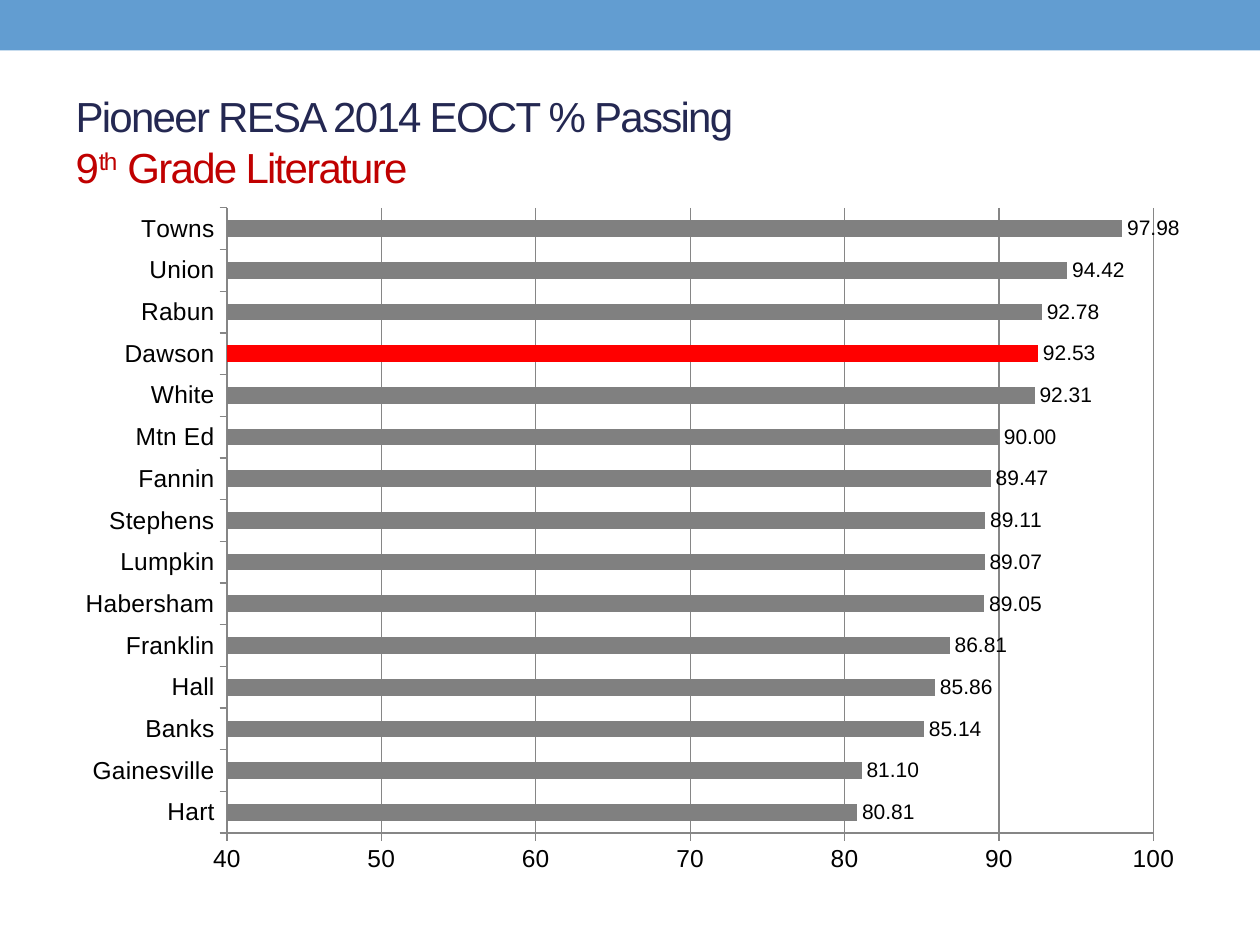
from dataclasses import dataclass

from pptx import Presentation
from pptx.chart.data import CategoryChartData
from pptx.dml.color import RGBColor
from pptx.enum.chart import XL_CHART_TYPE, XL_LABEL_POSITION, XL_TICK_MARK
from pptx.enum.shapes import MSO_SHAPE
from pptx.enum.text import MSO_ANCHOR, PP_ALIGN
from pptx.util import Inches, Pt


@dataclass(frozen=True)
class Theme:
    font: str = "Arial"
    band: str = "629DD1"
    title: str = "242852"
    subject: str = "C00000"
    text: str = "000000"
    bar: str = "808080"
    highlight: str = "FF0000"
    line: str = "868686"
    title_size: int = 24
    axis_size: int = 14
    label_size: int = 12


THEME = Theme()
HIGHLIGHTED = "Dawson"
PASSING = {
    "Hart": 80.81,
    "Gainesville": 81.10,
    "Banks": 85.14,
    "Hall": 85.86,
    "Franklin": 86.81,
    "Habersham": 89.05,
    "Lumpkin": 89.07,
    "Stephens": 89.11,
    "Fannin": 89.47,
    "Mtn Ed": 90.00,
    "White": 92.31,
    "Dawson": 92.53,
    "Rabun": 92.78,
    "Union": 94.42,
    "Towns": 97.98,
}


def set_font(font, size, color=THEME.text):
    font.name = THEME.font
    font.size = Pt(size)
    font.bold = False
    font.color.rgb = RGBColor.from_string(color)


def set_fill(fill, color):
    fill.solid()
    fill.fore_color.rgb = RGBColor.from_string(color)


def set_line(line):
    line.color.rgb = RGBColor.from_string(THEME.line)
    line.width = Pt(0.75)


def add_run(paragraph, text, color=THEME.title, spacing=-1, baseline=0):
    run = paragraph.add_run()
    run.text = text
    set_font(run.font, THEME.title_size, color)
    properties = run.font._element
    properties.set("spc", str(spacing * 100))
    if baseline:
        properties.set("baseline", str(baseline * 1000))


def add_band(slide, left, top, width, height):
    band = slide.shapes.add_shape(MSO_SHAPE.RECTANGLE, left, top, width, height)
    band.shadow.inherit = False
    set_fill(band.fill, THEME.band)
    band.line.fill.background()


def place_title(slide, left, top, width, height):
    title = slide.shapes.title
    title.left, title.top, title.width, title.height = left, top, width, height
    title.text_frame.vertical_anchor = MSO_ANCHOR.MIDDLE
    paragraph = title.text_frame.paragraphs[0]
    paragraph.alignment = PP_ALIGN.LEFT
    add_run(paragraph, "Pioneer RESA 2014 EOCT % Passing")
    paragraph.add_line_break()
    add_run(paragraph, "9", color=THEME.subject)
    add_run(paragraph, "th", color=THEME.subject, baseline=30)
    add_run(paragraph, " Grade Literature", color=THEME.subject)


def format_axis(axis):
    axis.major_tick_mark = XL_TICK_MARK.OUTSIDE
    axis.minor_tick_mark = XL_TICK_MARK.NONE
    set_font(axis.tick_labels.font, THEME.axis_size)
    set_line(axis.format.line)


def add_passing_chart(slide, left, top, width, height):
    data = CategoryChartData()
    data.categories = list(PASSING)
    data.add_series("Series 1", list(PASSING.values()))
    frame = slide.shapes.add_chart(
        XL_CHART_TYPE.BAR_CLUSTERED, left, top, width, height, data
    )
    chart = frame.chart
    chart.has_legend = False
    chart.has_title = False
    set_font(chart.font, THEME.axis_size)

    format_axis(chart.category_axis)
    chart.category_axis.has_major_gridlines = False
    value_axis = chart.value_axis
    format_axis(value_axis)
    value_axis.minimum_scale = 40
    value_axis.maximum_scale = 100
    value_axis.major_unit = 10
    value_axis.has_major_gridlines = True
    set_line(value_axis.major_gridlines.format.line)
    value_axis.tick_labels.number_format = "0"
    value_axis.tick_labels.number_format_is_linked = False

    plot = chart.plots[0]
    plot.gap_width = 150
    plot.vary_by_categories = False
    series = plot.series[0]
    set_fill(series.format.fill, THEME.bar)
    highlighted_point = series.points[list(PASSING).index(HIGHLIGHTED)]
    set_fill(highlighted_point.format.fill, THEME.highlight)

    labels = series.data_labels
    labels.show_value = True
    labels.position = XL_LABEL_POSITION.OUTSIDE_END
    labels.number_format = "###0.00"
    labels.number_format_is_linked = False
    set_font(labels.font, THEME.label_size)


def main():
    presentation = Presentation()
    presentation.slide_width = Inches(10)
    presentation.slide_height = Inches(7.5)
    slide = presentation.slides.add_slide(presentation.slide_layouts[5])
    add_band(slide, 0, 0, presentation.slide_width, Inches(0.4))
    place_title(slide, Inches(0.5), Inches(0.58), Inches(9), Inches(1.08))
    add_passing_chart(slide, Inches(0.5), Inches(1.54), Inches(9), Inches(5.5))
    presentation.save("out.pptx")


if __name__ == "__main__":
    main()
